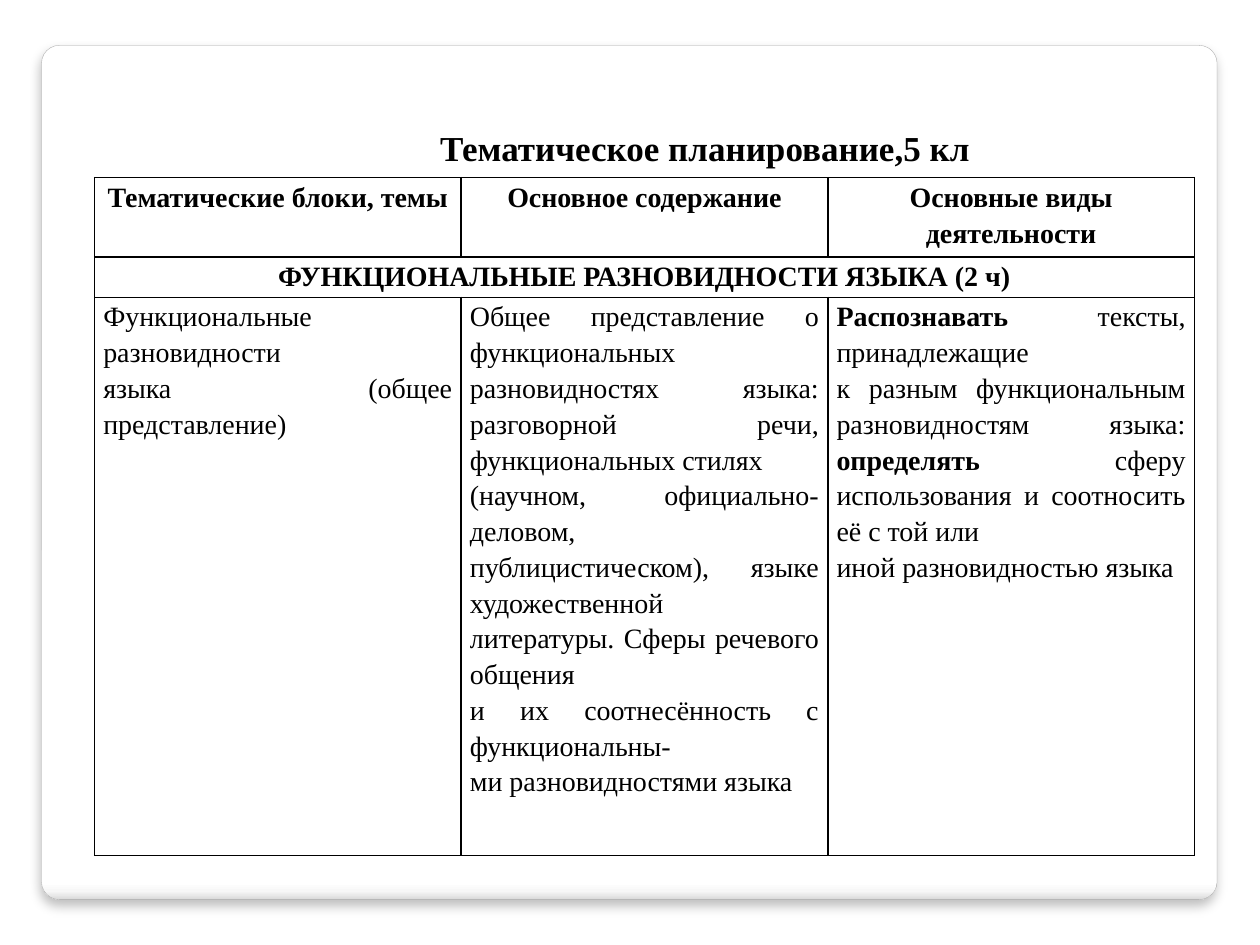
from lxml import etree
from pptx import Presentation
from pptx.dml.color import RGBColor
from pptx.enum.shapes import MSO_SHAPE
from pptx.enum.text import MSO_ANCHOR, PP_ALIGN
from pptx.oxml import parse_xml
from pptx.oxml.ns import nsdecls, qn
from pptx.util import Inches, Pt

ROUNDED = MSO_SHAPE.ROUNDED_RECTANGLE
CENTER, JUSTIFY = PP_ALIGN.CENTER, PP_ALIGN.JUSTIFY
MIDDLE = MSO_ANCHOR.MIDDLE

BLACK = RGBColor(0x00, 0x00, 0x00)
CARD_LINE = RGBColor(0xA4, 0xA4, 0xA4)
CARD_STOPS = [(0, "FFFFFF"), (98, "FFFFFF"), (99, "F7F7F7"), (100, "DADADA")]
FONT = "Times New Roman"

TITLE = "Тематическое планирование,5 кл"
HEADERS = ["Тематические блоки, темы", "Основное содержание", "Основные виды деятельности"]
SECTION = "ФУНКЦИОНАЛЬНЫЕ РАЗНОВИДНОСТИ ЯЗЫКА (2 ч)"
# Each cell is a list of paragraphs; ** marks the bold words
CONTENT = [
    ["Функциональные", "разновидности", "языка (общее представление)"],
    [
        "Общее представление о функциональных разновидностях языка: "
        "разговорной речи, функциональных стилях",
        "(научном, официально-деловом, публицистическом), языке художественной",
        "литературы. Сферы речевого общения",
        "и их соотнесённость с функциональны-",
        "ми разновидностями языка",
    ],
    [
        "**Распознавать** тексты, принадлежащие",
        "к разным функциональным разновидностям языка: **определять** "
        "сферу использования и соотносить её с той или",
        "иной разновидностью языка",
    ],
]
COLUMN_WIDTH = 2.91
ROW_HEIGHTS = [0.63, 0.32, 4.43]


def style_font(font, size):
    font.name = FONT
    font.size = Pt(size)
    font.color.rgb = BLACK


def add_card(slide):
    card = slide.shapes.add_shape(ROUNDED, Inches(0.33), Inches(0.36), Inches(9.33), Inches(6.78))
    card.adjustments[0] = 0.021
    card.line.color.rgb = CARD_LINE
    card.line.width = Pt(0.16)

    # Vertical gradient that darkens at the bottom edge
    card.fill.gradient()
    card.fill.gradient_angle = 270
    stops = card._element.spPr.find(qn("a:gradFill")).find(qn("a:gsLst"))
    for stop in list(stops):
        stops.remove(stop)
    for position, color in CARD_STOPS:
        stop = etree.SubElement(stops, qn("a:gs"), pos=str(position * 1000))
        etree.SubElement(stop, qn("a:srgbClr"), val=color)

    # Soft shadow below
    card._element.spPr.append(parse_xml(
        f'<a:effectLst {nsdecls("a")}><a:outerShdw blurRad="{Pt(6)}" dist="{Pt(4)}" '
        'dir="5400000" algn="t" rotWithShape="0"><a:srgbClr val="000000">'
        '<a:alpha val="25000"/></a:srgbClr></a:outerShdw></a:effectLst>'))


def place_title(slide):
    title = slide.shapes.title
    title.left, title.top = Inches(1.7), Inches(0.95)
    title.width, title.height = Inches(7.79), Inches(0.44)
    frame = title.text_frame
    frame.text = TITLE
    frame.vertical_anchor = MIDDLE
    paragraph = frame.paragraphs[0]
    paragraph.alignment = CENTER
    style_font(paragraph.font, 20)
    paragraph.font.bold = True
    # Keep the title in front of the card and the table
    slide.shapes._spTree.append(title._element)


def add_borders(cell):
    properties = cell._tc.get_or_add_tcPr()
    for index, side in enumerate(("lnL", "lnR", "lnT", "lnB")):
        properties.insert(index, parse_xml(
            f'<a:{side} {nsdecls("a")} w="{Pt(1)}"><a:solidFill>'
            f'<a:srgbClr val="{BLACK}"/></a:solidFill></a:{side}>'))


def fill_cell(cell, paragraphs, alignment):
    frame = cell.text_frame
    for index, text in enumerate(paragraphs):
        paragraph = frame.add_paragraph() if index else frame.paragraphs[0]
        paragraph.alignment = alignment
        paragraph.line_spacing = 1.15
        style_font(paragraph.font, 16)
        for part, words in enumerate(text.split("**")):
            if words:
                run = paragraph.add_run()
                run.text = words
                run.font.bold = part % 2 == 1


def add_plan_table(slide):
    count = len(HEADERS)
    table = slide.shapes.add_table(
        len(ROW_HEIGHTS), count, Inches(0.75), Inches(1.41),
        Inches(COLUMN_WIDTH * count), Inches(sum(ROW_HEIGHTS))).table
    for column in table.columns:
        column.width = Inches(COLUMN_WIDTH)
    for row, height in zip(table.rows, ROW_HEIGHTS):
        row.height = Inches(height)
    for cell in table.iter_cells():
        cell.margin_left = cell.margin_right = Inches(0.07)
        cell.margin_top = cell.margin_bottom = 0
        cell.fill.background()
        add_borders(cell)

    # Section row across all columns
    table.cell(1, 0).merge(table.cell(1, count - 1))
    fill_cell(table.cell(1, 0), [f"**{SECTION}**"], CENTER)
    for index, (header, paragraphs) in enumerate(zip(HEADERS, CONTENT)):
        fill_cell(table.cell(0, index), [f"**{header}**"], CENTER)
        fill_cell(table.cell(2, index), paragraphs, JUSTIFY)


def main():
    presentation = Presentation()
    presentation.slide_width, presentation.slide_height = Inches(10), Inches(7.5)
    slide = presentation.slides.add_slide(presentation.slide_layouts[5])
    add_card(slide)
    add_plan_table(slide)
    place_title(slide)
    presentation.save("out.pptx")


if __name__ == "__main__":
    main()
